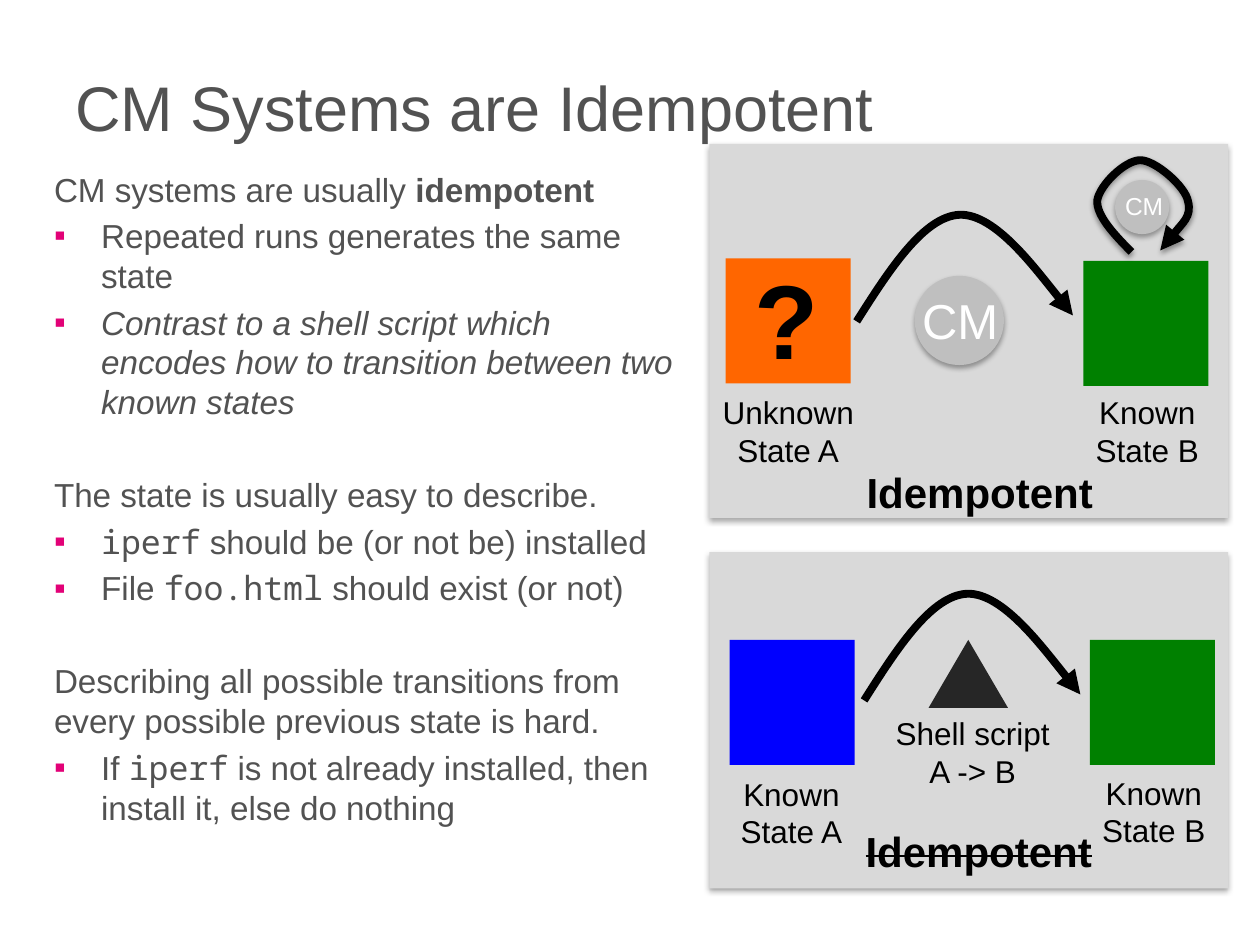
import pptx
import pptx.util
import pptx.dml.color
import pptx.enum.shapes
import pptx.enum.text
import pptx.oxml
import pptx.oxml.ns

Cm = pptx.util.Cm
Pt = pptx.util.Pt
RGBColor = pptx.dml.color.RGBColor
SHAPE = pptx.enum.shapes.MSO_SHAPE
ALIGN = pptx.enum.text.PP_ALIGN
ANCHOR = pptx.enum.text.MSO_ANCHOR
AUTO_SIZE = pptx.enum.text.MSO_AUTO_SIZE
qn = pptx.oxml.ns.qn
NAMESPACE = pptx.oxml.ns.nsdecls("a")

BLACK = RGBColor(0x00, 0x00, 0x00)
WHITE = RGBColor(0xFF, 0xFF, 0xFF)
TEXT_GREY = RGBColor(0x52, 0x52, 0x52)
PANEL_GREY = RGBColor(0xD9, 0xD9, 0xD9)
CIRCLE_GREY = RGBColor(0xBF, 0xBF, 0xBF)
SCRIPT_GREY = RGBColor(0x26, 0x26, 0x26)
BLUE = RGBColor(0x00, 0x00, 0xFF)
GREEN = RGBColor(0x00, 0x80, 0x00)
ORANGE = RGBColor(0xFF, 0x66, 0x00)
BULLET_PINK = RGBColor(0xE2, 0x01, 0x77)

presentation = pptx.Presentation()
presentation.slide_width = Cm(25.4)
presentation.slide_height = Cm(19.05)
slide = presentation.slides.add_slide(presentation.slide_layouts[6])


def add_shadow(shape, alpha):
    effects = shape._element.spPr.find(qn("a:effectLst"))
    effects.append(pptx.oxml.parse_xml(
        f'<a:outerShdw {NAMESPACE} blurRad="{Pt(3.1)}" dist="{Pt(1.8)}" dir="5400000" '
        f'rotWithShape="0"><a:srgbClr val="{BLACK}"><a:alpha val="{alpha}000"/>'
        '</a:srgbClr></a:outerShdw>'))


def add_text(position, paragraphs, color, base_format, wrap=False, align=ALIGN.LEFT):
    """Each paragraph is a list of (text, extra font format) runs."""
    shape = slide.shapes.add_textbox(*map(Cm, position))
    frame = shape.text_frame
    frame.word_wrap = wrap
    frame.auto_size = AUTO_SIZE.NONE if wrap else AUTO_SIZE.SHAPE_TO_FIT_TEXT
    for index, runs in enumerate(paragraphs):
        paragraph = frame.paragraphs[0] if index == 0 else frame.add_paragraph()
        paragraph.alignment = align
        for text, extra_format in runs:
            run = paragraph.add_run()
            run.text = text
            run.font.color.rgb = color
            for name, value in {"name": "Arial", **base_format, **extra_format}.items():
                setattr(run.font, name, value)
    return shape


# Panels, states, shell script and CM circles: kind, position, fill, shadow
SQUARE = 2.52
shapes = [
    (SHAPE.RECTANGLE, (14.3, 11.13, 10.46, 6.78), PANEL_GREY, True),
    (SHAPE.RECTANGLE, (14.3, 2.9, 10.46, 7.54), PANEL_GREY, True),
    (SHAPE.RECTANGLE, (14.71, 12.9, SQUARE, SQUARE), BLUE, False),
    (SHAPE.RECTANGLE, (21.97, 12.9, SQUARE, SQUARE), GREEN, False),
    (SHAPE.ISOSCELES_TRIANGLE, (18.72, 12.9, 1.6, 1.37), SCRIPT_GREY, False),
    (SHAPE.RECTANGLE, (14.63, 5.21, SQUARE, SQUARE), ORANGE, False),
    (SHAPE.RECTANGLE, (21.84, 5.26, SQUARE, SQUARE), GREEN, False),
    (SHAPE.OVAL, (18.44, 5.56, 1.8, 1.8), CIRCLE_GREY, True),
    (SHAPE.OVAL, (22.48, 3.63, 1.09, 1.09), CIRCLE_GREY, True),
]
for kind, position, color, has_shadow in shapes:
    shape = slide.shapes.add_shape(kind, *map(Cm, position))
    shape.fill.solid()
    shape.fill.fore_color.rgb = color
    shape.line.fill.background()
    shape.shadow.inherit = False
    if has_shadow:
        add_shadow(shape, 35)

# Curved arrows: a start point, then three Bézier points per segment
arc = [(0, 0), (0.67, -1.06), (1.36, -2.12), (2.08, -2.15),
       (2.81, -2.17), (4.36, -0.12), (4.36, -0.12)]
loop = [(22.81, 5.08), (22.45, 4.72), (22.1, 4.34), (22.12, 4.04), (22.17, 3.73),
        (22.68, 3.23), (22.99, 3.23), (23.29, 3.23), (23.9, 3.76), (23.95, 4.06),
        (24.03, 4.37), (23.39, 5.05), (23.39, 5.05)]
curves = [([(17.42 + x, 14.12 + y) for x, y in arc], False),
          ([(17.27 + x, 6.48 + y) for x, y in arc], False),
          (loop, True)]
for points, has_shadow in curves:
    start, *others = [(Cm(x), Cm(y)) for x, y in points]
    builder = slide.shapes.build_freeform(*start)
    builder.add_line_segments(others, close=False)
    shape = builder.convert_to_shape()
    lines = list(shape._element.iter(qn("a:lnTo")))
    for index in range(0, len(lines), 3):
        curve = pptx.oxml.parse_xml(f"<a:cubicBezTo {NAMESPACE}/>")
        lines[index].addprevious(curve)
        for line in lines[index:index + 3]:
            curve.append(line[0])
            line.getparent().remove(line)
    shape.fill.background()
    shape.line.color.rgb = BLACK
    shape.line.width = Pt(4.5)
    shape.line._get_or_add_ln().append(
        pptx.oxml.parse_xml(f'<a:tailEnd {NAMESPACE} type="triangle"/>'))
    shape.shadow.inherit = False
    if has_shadow:
        add_shadow(shape, 38)

# Title
title = add_text((1.27, 0.76, 22.86, 2.77), [[("CM Systems are Idempotent", {})]],
                 TEXT_GREY, {"size": Pt(36)}, wrap=True)
title.text_frame.vertical_anchor = ANCHOR.MIDDLE

# Body: headings open a section, the other paragraphs are bullets
MONO = {"name": "Noto Sans Mono"}
body_paragraphs = [
    [("CM systems are usually ", {}), ("idempotent", {"bold": True})],
    [("Repeated runs generates the same state", {})],
    [("Contrast to a shell script which encodes how to transition between two known states",
      {"italic": True})],
    [("The state is usually easy to describe.", {})],
    [("iperf", MONO), (" should be (or not be) installed", {})],
    [("File ", {}), ("foo.html", MONO), (" should exist (or not)", {})],
    [("Describing all possible transitions from every possible previous state is hard.", {})],
    [("If ", {}), ("iperf", MONO),
     (" is not already installed, then install it, else do nothing", {})],
]
headings = (0, 3, 6)
body = add_text((0.84, 3.28, 13.21, 13.64), body_paragraphs, TEXT_GREY,
                {"size": Pt(19)}, wrap=True)
for index, paragraph in enumerate(body.text_frame.paragraphs):
    if index in headings:
        if index > 0:
            paragraph.space_before = Pt(30.4)
        continue
    paragraph.space_before = Pt(3.8)
    properties = paragraph._p.get_or_add_pPr()
    properties.set("marL", str(Cm(0.95)))
    properties.set("indent", str(-Cm(0.95)))
    for bullet in (f'<a:buClr {NAMESPACE}><a:srgbClr val="{BULLET_PINK}"/></a:buClr>',
                   f'<a:buFont {NAMESPACE} typeface="Arial"/>',
                   f'<a:buChar {NAMESPACE} char="▪"/>'):
        properties.append(pptx.oxml.parse_xml(bullet))

# Diagram labels
labels = [
    ((14.66, 15.49, 2.59, 1.8), ("Known", "State A")),
    ((21.95, 15.47, 2.62, 1.8), ("Known", "State B")),
    ((17.78, 14.27, 3.66, 1.8), ("Shell script", "A -> B")),
    ((14.3, 7.8, 3.18, 1.8), ("Unknown", "State A")),
    ((21.82, 7.8, 2.62, 1.8), ("Known", "State B")),
]
for position, lines in labels:
    add_text(position, [[(line, {})] for line in lines], BLACK,
             {"size": Pt(18)}, align=ALIGN.CENTER)

add_text((14.94, 5, 1.83, 2.82), [[("?", {})]], BLACK,
         {"size": Pt(60), "bold": True}, align=ALIGN.CENTER)
for position, size in (((18.34, 5.74, 2.06, 1.45), 28), ((22.43, 3.73, 1.3, 0.86), 14)):
    add_text(position, [[("CM", {})]], WHITE, {"size": Pt(size)})

# Panel captions, the lower one struck through
for position in ((17.22, 9.27, 5.13, 1.27), (17.2, 16.51, 5.13, 1.27)):
    caption = add_text(position, [[("Idempotent", {})]], BLACK,
                       {"size": Pt(24), "bold": True})
caption_run = caption.text_frame.paragraphs[0].runs[0]
caption_run._r.get_or_add_rPr().set("strike", "sngStrike")

presentation.save("out.pptx")
